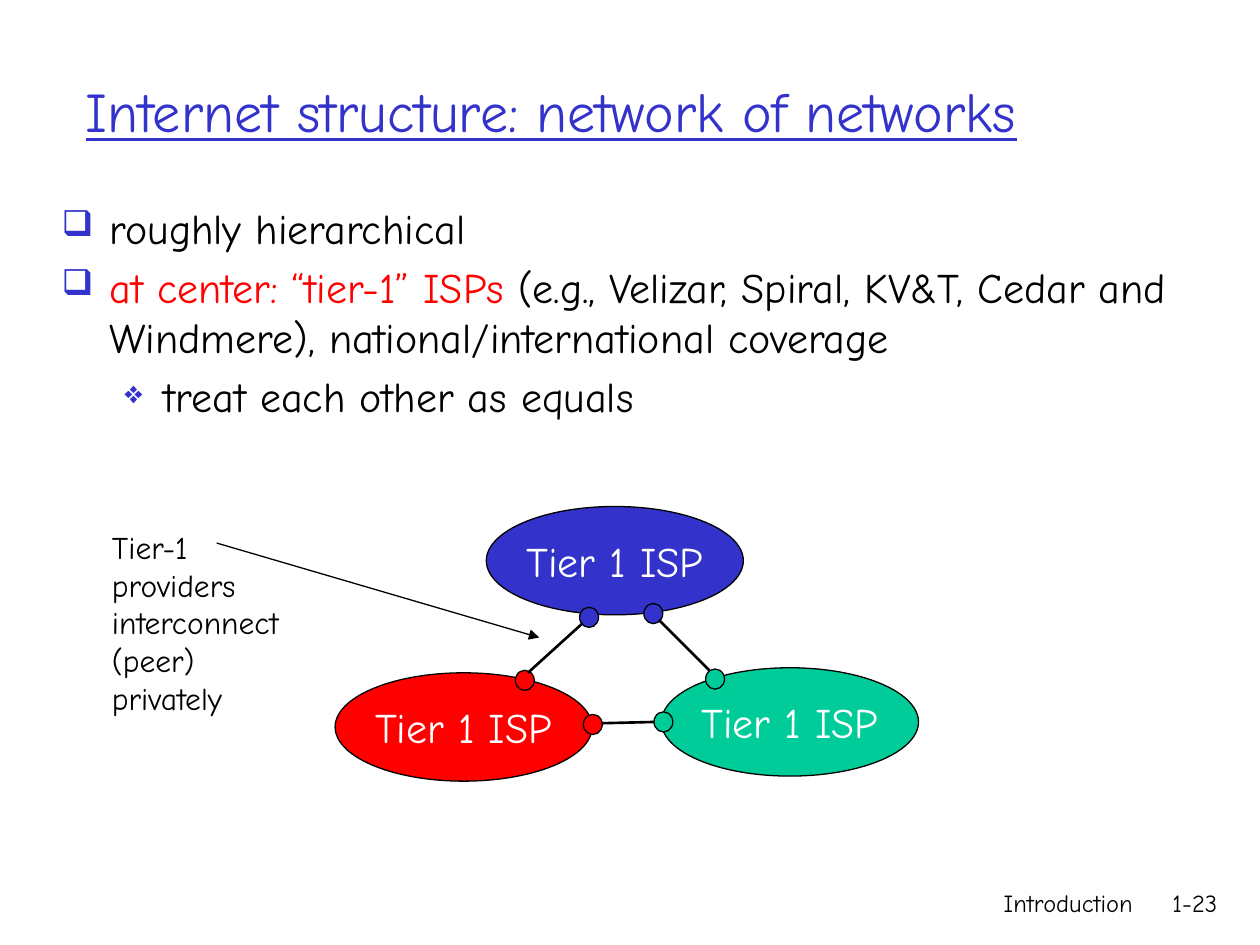
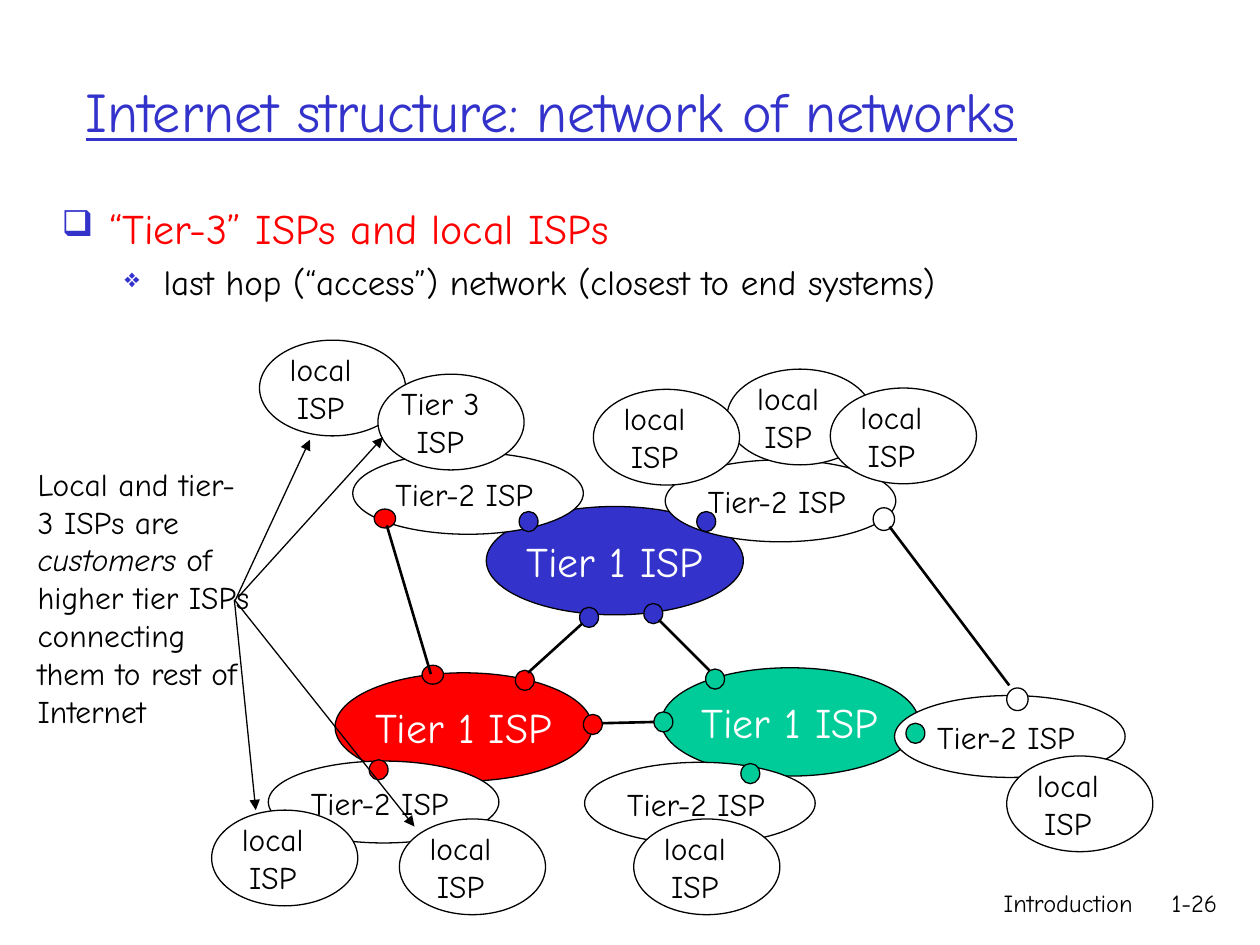
import pptx
import pptx.util
import pptx.dml.color
import pptx.enum.shapes
import pptx.enum.text
import pptx.oxml
import pptx.oxml.ns
from lxml import etree

Inches = pptx.util.Inches
Pt = pptx.util.Pt
RGB = pptx.dml.color.RGBColor.from_string
Align = pptx.enum.text.PP_ALIGN
Anchor = pptx.enum.text.MSO_ANCHOR
qn = pptx.oxml.ns.qn

hues = {"ink": "000000", "blue": "3333CC", "red": "FF0000", "green": "00CC99", "white": "FFFFFF"}
font = "Comic Neue"


def write(frame, paras, size, align=Align.LEFT):
    for i, runs in enumerate(paras):
        para = frame.paragraphs[0] if i == 0 else frame.add_paragraph()
        para.alignment = align
        for text, hue, *style in runs:
            run = para.add_run()
            run.text = text
            run.font.name = font
            run.font.size = Pt(size)
            run.font.color.rgb = RGB(hues[hue])
            run.font.italic = "italic" in style
            run.font.underline = "under" in style


def place(slide, box, hue=None):
    spot = [Inches(n) for n in box]
    if hue is None:
        shape = slide.shapes.add_textbox(*spot)
        shape.text_frame.word_wrap = True
        return shape
    shape = slide.shapes.add_shape(pptx.enum.shapes.MSO_SHAPE.OVAL, *spot)
    shape.shadow.inherit = False
    shape.fill.solid()
    shape.fill.fore_color.rgb = RGB(hues[hue])
    shape.line.color.rgb = RGB(hues["ink"])
    shape.line.width = Pt(0.75)
    return shape


bullets = [("❑", 0.38, -0.38, 85), ("❖", 0.81, -0.31, 75)]
cores = [(2.66, 5.34, "red"), (3.86, 4.02, "blue"), (5.25, 5.3, "green")]
ports = [
    (5.6, 5.31, "green"), (5.11, 4.79, "blue"), (4.6, 4.82, "blue"),
    (4.09, 5.32, "red"), (4.63, 5.67, "red"), (5.19, 5.65, "green"),
]
peers = [(4.78, 5.74, 5.19, 5.73), (5.23, 4.92, 5.63, 5.32), (4.19, 5.34, 4.62, 4.95)]

pages = [
    {
        "num": "1-23",
        "height": 5.08,
        "points": [
            (0, 24, [("roughly hierarchical", "ink")]),
            (0, 24, [
                ("at center: “tier-1” ISPs ", "red"),
                ("(e.g., Velizar, Spiral, KV&T, Cedar and Windmere), national/international coverage", "ink"),
            ]),
            (1, 24, [("treat each other as equals", "ink")]),
        ],
        "mids": [], "dots": [], "edge": [], "wires": [],
        "spot": (0.79, 4.14, 1.71, 1.6),
        "note": [[("Tier-1 providers interconnect (peer) privately", "ink")]],
        "arrows": [(1.72, 4.31, 4.28, 5.06)],
    },
    {
        "num": "1-26",
        "height": 1,
        "points": [
            (0, 24, [("“Tier-3” ISPs and local ISPs", "red")]),
            (1, 20, [("last hop (“access”) network (closest to end systems)", "ink")]),
        ],
        "mids": [(5.28, 3.65), (2.8, 3.59), (2.13, 6.04), (4.64, 6.05), (7.1, 5.52)],
        "dots": [
            (5.53, 4.06, 0.15, 0.16, "blue"), (4.12, 4.06, 0.15, 0.16, "blue"),
            (2.93, 6.03, 0.15, 0.16, "red"), (5.88, 6.06, 0.15, 0.16, "green"),
            (7.19, 5.74, 0.15, 0.16, "green"), (2.97, 4.04, 0.17, 0.15, "red"),
            (3.35, 5.28, 0.17, 0.15, "red"), (6.93, 4.03, 0.17, 0.18, "white"),
            (7.99, 5.46, 0.17, 0.18, "white"),
        ],
        "edge": [
            (5.77, 2.93, "local"), (4.71, 3.09, "local"), (6.59, 3.08, "local"),
            (1.68, 6.43, "local"), (2.06, 2.7, "local"), (3, 2.97, "Tier 3"),
            (3.17, 6.5, "local"), (5.03, 6.5, "local"), (7.99, 6, "local"),
        ],
        "wires": [(3.07, 4.17, 3.42, 5.35), (7.06, 4.18, 8.01, 5.44)],
        "spot": (0.2, 3.64, 1.97, 2.5),
        "note": [
            [("Local and tier- 3 ISPs are ", "ink"), ("customers", "ink", "italic"), (" of", "ink")],
            [("higher tier ISPs", "ink")],
            [("connecting them to rest of Internet", "ink")],
        ],
        "arrows": [
            (1.86, 4.78, 2.46, 3.49), (1.89, 4.74, 3.04, 3.47),
            (1.86, 4.76, 2.03, 6.43), (1.86, 4.76, 3.29, 6.56),
        ],
    },
]

deck = pptx.Presentation()
deck.slide_width = Inches(10)
deck.slide_height = Inches(7.5)

for page in pages:
    slide = deck.slides.add_slide(deck.slide_layouts[5])
    title = slide.shapes.title
    title.left, title.top, title.width, title.height = [Inches(n) for n in (0.58, 0.25, 8.85, 1.25)]
    title.text_frame.word_wrap = True
    title.text_frame.auto_size = pptx.enum.text.MSO_AUTO_SIZE.NONE
    title.text_frame.vertical_anchor = Anchor.MIDDLE
    write(title.text_frame, [[("Internet structure: network of networks", "blue", "under")]], 32)

    for left, width, text in [(5.92, 3.17, "Introduction"), (9.08, 0.68, page["num"])]:
        foot = place(slide, (left, 7, width, 0.5))
        write(foot.text_frame, [[(text, "ink")]], 14, Align.RIGHT)

    body = place(slide, (0.39, 1.56, 9.23, page["height"])).text_frame
    write(body, [runs for level, size, runs in page["points"]], 24)
    for para, (level, size, runs) in zip(body.paragraphs, page["points"]):
        mark, left, indent, scale = bullets[level]
        para.level = level
        para.space_before = Pt(size * 0.2)
        for run in para.runs:
            run.font.size = Pt(size)
        props = para._p.get_or_add_pPr()
        props.set("marL", str(Inches(left)))
        props.set("indent", str(Inches(indent)))
        tint = etree.SubElement(props, qn("a:buClr"))
        etree.SubElement(tint, qn("a:srgbClr"), val=hues["blue"])
        etree.SubElement(props, qn("a:buSzPct"), val=str(scale * 1000))
        etree.SubElement(props, qn("a:buChar"), char=mark)

    for left, top, hue in cores:
        core = place(slide, (left, top, 2.04, 0.86), hue).text_frame
        core.word_wrap = False
        core.vertical_anchor = Anchor.MIDDLE
        write(core, [[("Tier 1 ISP", "white")]], 24, Align.CENTER)
    for left, top, hue in ports:
        place(slide, (left, top, 0.15, 0.16), hue)

    for left, top in page["mids"]:
        place(slide, (left, top, 1.83, 0.65), "white")
        label = place(slide, (left + 0.24, top + 0.13, 1.47, 0.4))
        write(label.text_frame, [[("Tier-2 ISP", "ink")]], 18)
    for *box, hue in page["dots"]:
        place(slide, box, hue)
    for left, top, name in page["edge"]:
        place(slide, (left, top, 1.16, 0.76), "white")
        shift, width = (0.12, 0.73) if name == "local" else (0.03, 0.93)
        label = place(slide, (left + shift, top + 0.03, width, 0.7))
        write(label.text_frame, [[(name, "ink")], [("ISP", "ink")]], 18, Align.CENTER)

    write(place(slide, page["spot"]).text_frame, page["note"], 18)

    for group, weight in [(peers + page["wires"], 1.5), (page["arrows"], 0.75)]:
        for ends in group:
            link = slide.shapes.add_connector(
                pptx.enum.shapes.MSO_CONNECTOR.STRAIGHT, *[Inches(n) for n in ends])
            link.line.color.rgb = RGB(hues["ink"])
            link.line.width = Pt(weight)
            props = link.element.spPr
            if group is page["arrows"]:
                etree.SubElement(props.find(qn("a:ln")), qn("a:tailEnd"), type="triangle")
            etree.SubElement(props, qn("a:effectLst"))

deck.save("out.pptx")
